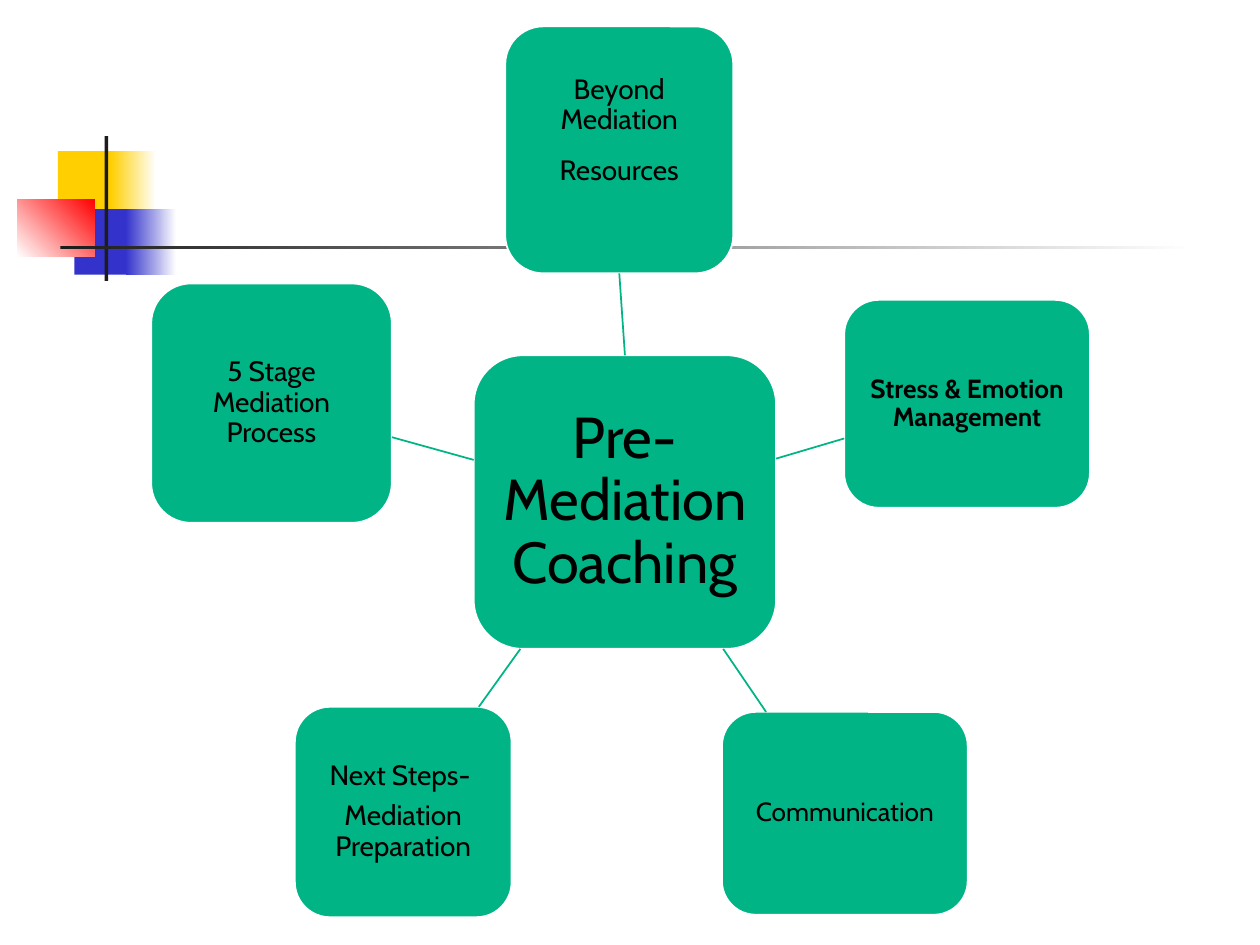
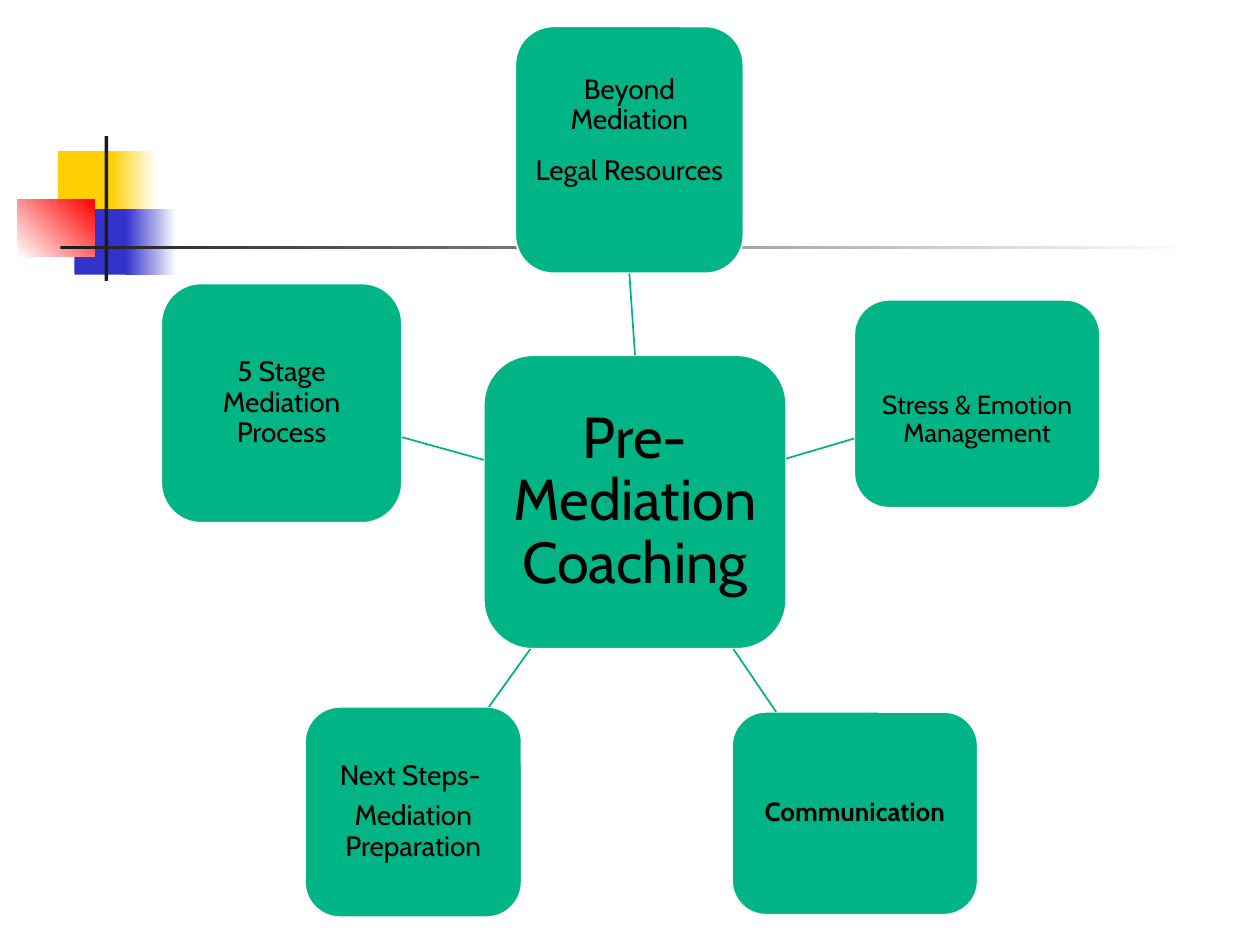
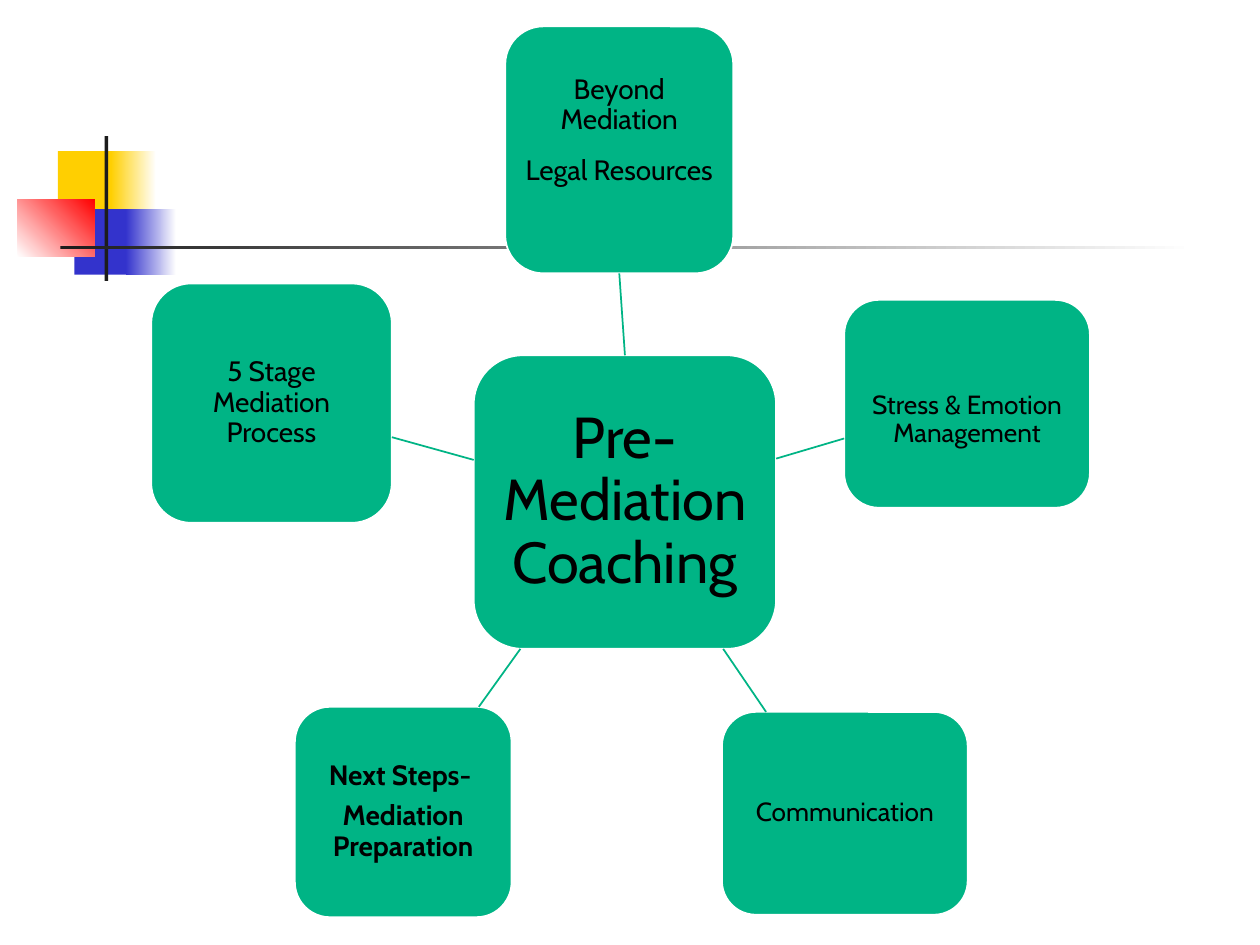
from pptx import Presentation
from pptx.dml.color import RGBColor
from pptx.enum.shapes import MSO_CONNECTOR as Connector, MSO_SHAPE as Shape
from pptx.enum.text import MSO_ANCHOR as Anchor, PP_ALIGN as Align
from pptx.oxml.ns import qn
from pptx.util import Inches, Pt
from lxml import etree

COLORS = {"green": "00B485", "white": "FFFFFF", "black": "000000", "yellow": "FFCF01",
          "blue": "3333CC", "red": "FF0000", "ink": "1C1C1C"}
FONT = "Cabin"
CORNER = 0.167


def rgb(name):
    return RGBColor.from_string(COLORS[name])


def add_box(slide, at, lines, size, inset, bold=False, before=(0, 0), extra=(0, 0)):
    """Green rounded box; before: spacing of first and later lines, extra: top and bottom inset."""
    box = slide.shapes.add_shape(Shape.ROUNDED_RECTANGLE, *map(Inches, at))
    box.adjustments[0] = CORNER
    box.shadow.inherit = False
    box.fill.solid()
    box.fill.fore_color.rgb = rgb("green")
    box.line.color.rgb = rgb("white")
    box.line.width = Pt(1)
    frame = box.text_frame
    frame.word_wrap = True
    frame.vertical_anchor = Anchor.MIDDLE
    frame.margin_left = frame.margin_right = Inches(inset)
    frame.margin_top, frame.margin_bottom = (Inches(inset + more) for more in extra)
    frame.text = "\n".join(lines)
    for number, line in enumerate(frame.paragraphs):
        line.alignment = Align.CENTER
        line.line_spacing = 0.9
        line.space_before = Pt(before[min(number, 1)])
        line.font.name, line.font.size, line.font.bold = FONT, Pt(size), bold
        line.font.color.rgb = rgb("black")
    return box


deck = Presentation()
deck.slide_width, deck.slide_height = Inches(10), Inches(7.5)
layout = deck.slide_layouts[6]
for placeholder in list(layout.placeholders):
    layout.shapes.element.remove(placeholder.element)
slides = [deck.slides.add_slide(layout) for _ in range(3)]

# Shared squares and cross: place, colours from start to end, gradient angle
ornaments = [
    ((0.46, 1.2, 0.48, 0.52), ["yellow"], 0),
    ((0.88, 1.2, 0.36, 0.52), ["yellow", "white"], 0),
    ((0.59, 1.66, 0.46, 0.52), ["blue"], 0),
    ((1, 1.66, 0.4, 0.52), ["blue", "white"], 0),
    ((0.14, 1.58, 0.61, 0.46), ["white", "red"], 45),
    ((0.83, 1.08, 0.03, 1.15), ["ink"], 0),
    ((0.48, 1.95, 9, 0.03), ["ink", "white"], 0),
]
for at, tones, angle in ornaments:
    ornament = slides[0].shapes.add_shape(Shape.RECTANGLE, *map(Inches, at))
    ornament.shadow.inherit = False
    ornament.line.fill.background()
    if len(tones) == 1:
        ornament.fill.solid()
        ornament.fill.fore_color.rgb = rgb(tones[0])
    else:
        ornament.fill.gradient()
        ornament.fill.gradient_angle = angle
        for stop, tone in zip(ornament.fill.gradient_stops, tones):
            stop.color.rgb = rgb(tone)
# The ornaments belong to the layout, so that every slide shows them
for ornament in list(slides[0].shapes):
    layout.shapes.element.append(ornament.element)

# Topics around the centre: place, size, inset, line spacing, link from centre to topic
topics = {
    "resources": ((4.01, 0.21, 1.81, 1.96), 16, 0.05, (0, 12), (4.94, 2.82, 4.93, 2.18)),
    "stress": ((6.7, 2.38, 1.95, 1.65), 15, 0.06, (0, 0), (6.16, 3.64, 6.7, 3.48)),
    "communication": ((5.73, 5.65, 1.95, 1.61), 15, 0.07, (0, 0), (5.74, 5.15, 6.08, 5.65)),
    "preparation": ((2.34, 5.61, 1.72, 1.67), 16, 0.06, (5.6, 5.6), (4.13, 5.15, 3.8, 5.61)),
    "process": ((1.2, 2.25, 1.91, 1.9), 16, 0.04, (5.6, 5.6), (3.76, 3.65, 3.11, 3.47)),
}
wording = {
    "resources": ["Beyond Mediation", "Legal Resources"],
    "stress": ["Stress & Emotion Management"],
    "communication": ["Communication"],
    "preparation": ["Next Steps- ", "Mediation Preparation"],
    "process": ["5 Stage Mediation Process"],
}

# Each slide: highlighted topic, shift to the right, changed wording
steps = [
    ("stress", 0, {"resources": ["Beyond Mediation", "Resources"]}),
    ("communication", 0.08, {}),
    ("preparation", 0, {}),
]
for slide, (current, shift, changes) in zip(slides, steps):
    centre = add_box(slide, (3.76 + shift, 2.82, 2.4, 2.33),
                     ["Pre-", "Mediation", "Coaching"], 33, 0.09)
    for topic, lines in (wording | changes).items():
        (left, top, width, height), size, inset, before, (x1, y1, x2, y2) = topics[topic]
        # Resources sits high in its box, stress sits low unless highlighted
        extra = (0, 0.3) if topic == "resources" else (0, 0)
        if topic == "stress" and current != topic:
            extra = (0.26, 0)
        box = add_box(slide, (left + shift, top, width, height), lines, size, inset,
                      topic == current, before, extra)
        link = slide.shapes.add_connector(Connector.STRAIGHT, Inches(x1 + shift), Inches(y1),
                                          Inches(x2 + shift), Inches(y2))
        link.line.color.rgb = rgb("green")
        link.line.width = Pt(1)
        etree.SubElement(link.element.spPr, qn("a:effectLst"))
        if topic == "resources":
            link.begin_connect(centre, 0)
            link.end_connect(box, 2)

deck.save("out.pptx")
